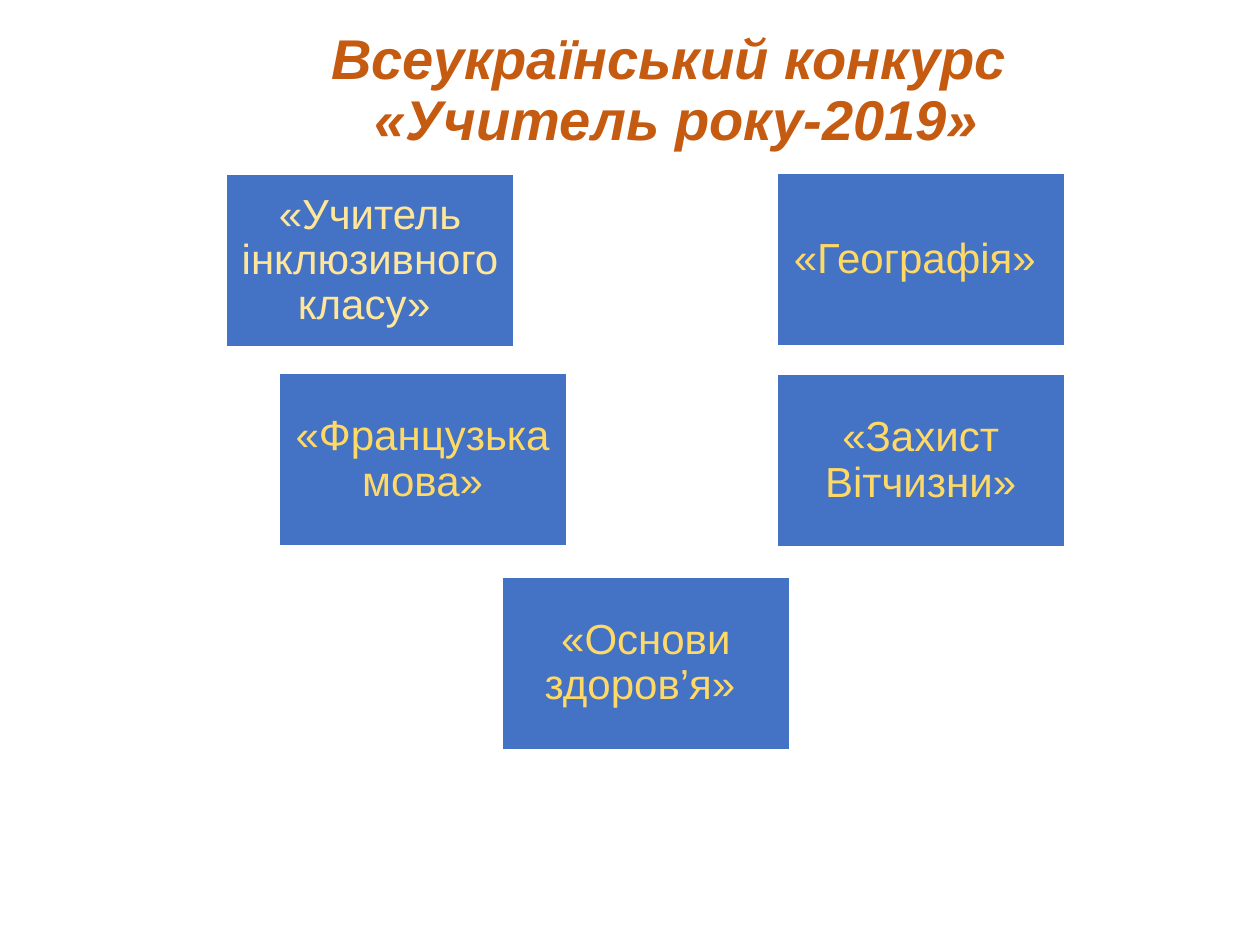
from dataclasses import dataclass

from pptx import Presentation
from pptx import util as u
from pptx.dml.color import RGBColor
from pptx.enum import shapes, text


@dataclass(frozen=True)
class Theme:
    font: str = "Arial"
    heading: str = "C55A11"
    tile: str = "4472C4"
    outline: str = "FFFFFF"
    pale: str = "FFE699"
    gold: str = "FFD966"
    heading_size: int = 32
    tile_size: int = 24
    line_spacing: float = 0.9
    outline_width: float = 1.5


class ContestSlide:
    def __init__(self, slide, theme):
        self.slide = slide
        self.theme = theme

    def label(self, frame, wording, size, color, anchor, bold=False, italic=False):
        frame.word_wrap = True
        frame.vertical_anchor = anchor
        paragraph = frame.paragraphs[0]
        paragraph.text = wording
        paragraph.alignment = text.PP_ALIGN.CENTER
        paragraph.line_spacing = self.theme.line_spacing
        for run in paragraph.runs:
            run.font.name = self.theme.font
            run.font.size = u.Pt(size)
            run.font.bold = bold
            run.font.italic = italic
            run.font.color.rgb = RGBColor.from_string(color)

    def heading(self, wording, left, top, width, height):
        box = self.slide.shapes.add_textbox(
            u.Cm(left), u.Cm(top), u.Cm(width), u.Cm(height))
        box.text_frame.margin_top = u.Cm(0.05)
        self.label(box.text_frame, wording, self.theme.heading_size,
                   self.theme.heading, text.MSO_ANCHOR.TOP, bold=True, italic=True)

    def tile(self, wording, left, top, color, width=5.82, height=3.5, inset=0.25):
        box = self.slide.shapes.add_shape(
            shapes.MSO_SHAPE.RECTANGLE,
            u.Cm(left), u.Cm(top), u.Cm(width), u.Cm(height))
        box.shadow.inherit = False
        box.fill.solid()
        box.fill.fore_color.rgb = RGBColor.from_string(self.theme.tile)
        box.line.color.rgb = RGBColor.from_string(self.theme.outline)
        box.line.width = u.Pt(self.theme.outline_width)
        frame = box.text_frame
        frame.margin_left = frame.margin_right = u.Cm(inset)
        frame.margin_top = frame.margin_bottom = u.Cm(inset)
        self.label(frame, wording, self.theme.tile_size, color,
                   text.MSO_ANCHOR.MIDDLE)


def main():
    theme = Theme()
    deck = Presentation()
    deck.slide_width, deck.slide_height = u.Cm(25.4), u.Cm(19.05)
    contest = ContestSlide(deck.slides.add_slide(deck.slide_layouts[6]), theme)

    contest.heading("Всеукраїнський конкурс\v «Учитель року-2019»",
                    2.54, 0.58, 21.9, 3.68)

    right_column = 15.65
    nominations = [
        ("«Учитель інклюзивного класу» ", 4.55, 3.51, theme.pale),
        ("«Географія» ", right_column, 3.48, theme.gold),
        ("«Французька мова»", 5.61, 7.52, theme.gold),
        ("«Захист Вітчизни»", right_column, 7.54, theme.gold),
        ("«Основи здоров’я» ", 10.11, 11.63, theme.gold),
    ]
    for nomination in nominations:
        contest.tile(*nomination)

    deck.save("out.pptx")


if __name__ == "__main__":
    main()
